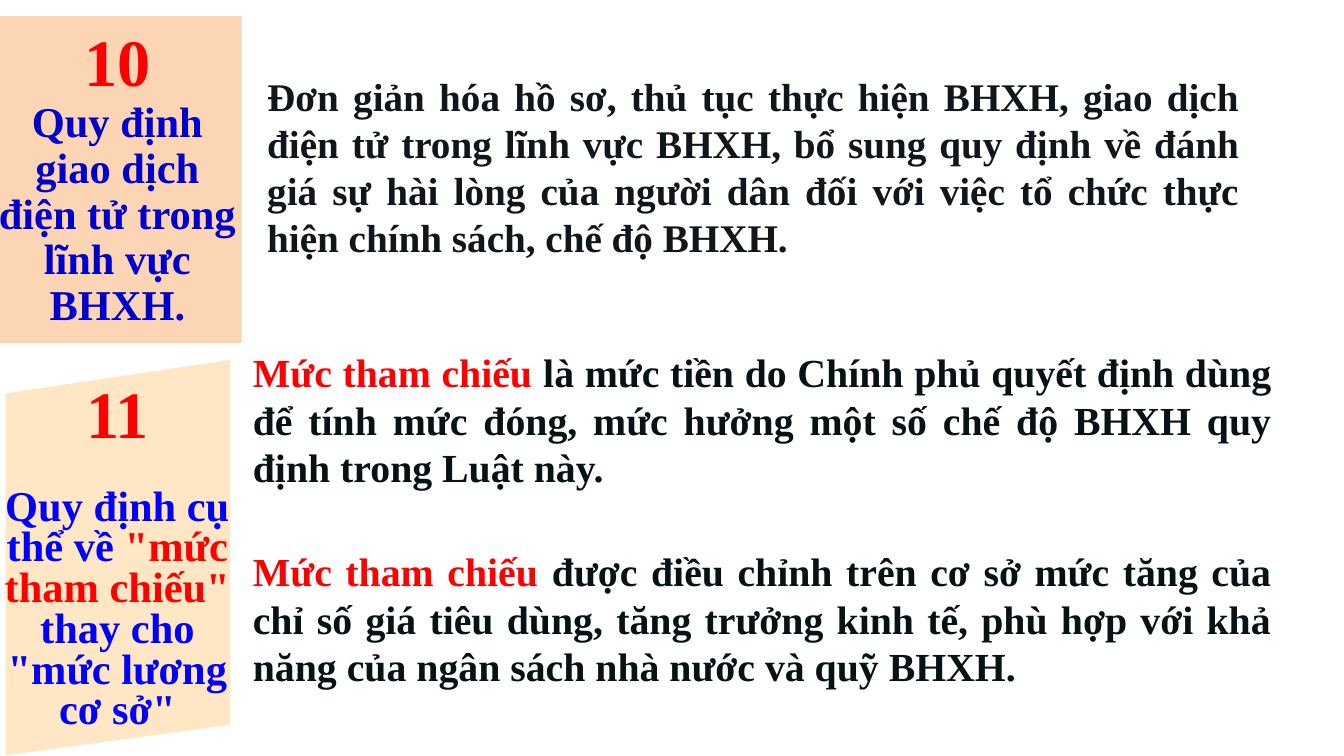
from pptx import Presentation
from pptx.dml.color import RGBColor
from pptx.enum.shapes import MSO_SHAPE as Shape
from pptx.enum.text import MSO_ANCHOR as Anchor, PP_ALIGN as Align
from pptx.util import Inches, Pt

FONT = "Times New Roman"
RED, BLUE, NAVY = "FF0000", "0000FF", "0000CC"
INK, DARK = "11161B", "071215"
PEACH, CREAM = "FCD5B5", "FFE6C5"
HIGH = 95 / 12
WIDE = HIGH * 16 / 9


def color(code):
    return RGBColor.from_string(code)


def paint(shape, fill):
    shape.shadow.inherit = False
    shape.fill.solid()
    shape.fill.fore_color.rgb = color(fill)
    shape.line.fill.background()


def write(par, parts, size, align):
    """Fill a paragraph with (text, colour) parts."""
    par.alignment = align
    par.font.name, par.font.size, par.font.bold = FONT, Pt(size), True
    for text, code in parts:
        run = par.add_run()
        run.text = text
        run.font.color.rgb = color(code)


def label(shape, number, parts, lines, gap=0):
    """Set a large number above a centred heading."""
    frame = shape.text_frame
    frame.word_wrap = True
    frame.vertical_anchor = Anchor.MIDDLE
    frame.margin_left = frame.margin_right = 0
    frame.margin_top = frame.margin_bottom = 0
    top, head = frame.paragraphs[0], frame.add_paragraph()
    write(top, [(number, RED)], 50, Align.CENTER)
    write(head, parts, 32, Align.CENTER)
    top.line_spacing = head.line_spacing = lines
    top.space_after = Pt(gap)


def body(slide, box, pars, size, space, gap=0):
    """Add justified text, with an extra gap between paragraphs."""
    frame = slide.shapes.add_textbox(*map(Inches, box)).text_frame
    frame.word_wrap = True
    for i, parts in enumerate(pars):
        par = frame.add_paragraph() if i else frame.paragraphs[0]
        write(par, parts, size, Align.JUSTIFY)
        par.space_before = Pt(space + (gap if i else 0))
        par.space_after = Pt(space)


def slant(slide, points, fill):
    first, *rest = [(Inches(x), Inches(y)) for x, y in points]
    form = slide.shapes.build_freeform(*first)
    form.add_line_segments(rest, close=True)
    paint(form.convert_to_shape(), fill)


def main():
    # Widescreen page
    deck = Presentation()
    deck.slide_width = Inches(WIDE)
    deck.slide_height = Inches(HIGH)
    slide = deck.slides.add_slide(deck.slide_layouts[6])

    # Item 10
    panel = slide.shapes.add_shape(
        Shape.RECTANGLE, *map(Inches, (-0.07, 0.17, 2.6, 3.42)))
    paint(panel, PEACH)
    label(panel, "10",
          [("Quy định giao dịch điện tử trong lĩnh vực BHXH.", NAVY)], 0.9)
    body(slide, (2.7, 0.71, 10.38, 2.09), [
        [("Đơn giản hóa hồ sơ, thủ tục thực hiện BHXH, giao dịch điện tử "
          "trong lĩnh vực BHXH, bổ sung quy định về đánh giá sự hài lòng của "
          "người dân đối với việc tổ chức thực hiện chính sách, chế độ BHXH.",
          INK)],
    ], 29.5, 8.4)

    # Item 11
    slant(slide, [(0.06, 4.12), (2.41, 3.77), (2.41, 7.59), (0.06, 7.91)],
          CREAM)
    title = slide.shapes.add_textbox(*map(Inches, (-0.07, 3.86, 2.6, 4.01)))
    label(title, "11", [
        ("Quy định cụ thể về ", BLUE),
        ('"mức tham chiếu" ', RED),
        ('thay cho "mức lương cơ sở"', BLUE),
    ], 0.8, gap=28.5)
    term = ("Mức tham chiếu ", RED)
    body(slide, (2.55, 3.59, 10.87, 3.72), [
        [term, ("là mức tiền do Chính phủ quyết định dùng để tính mức đóng, "
                "mức hưởng một số chế độ BHXH quy định trong Luật này.",
                DARK)],
        [term, ("được điều chỉnh trên cơ sở mức tăng của chỉ số giá tiêu "
                "dùng, tăng trưởng kinh tế, phù hợp với khả năng của ngân "
                "sách nhà nước và quỹ BHXH.", DARK)],
    ], 30, 6, gap=30)

    deck.save("out.pptx")


if __name__ == "__main__":
    main()
